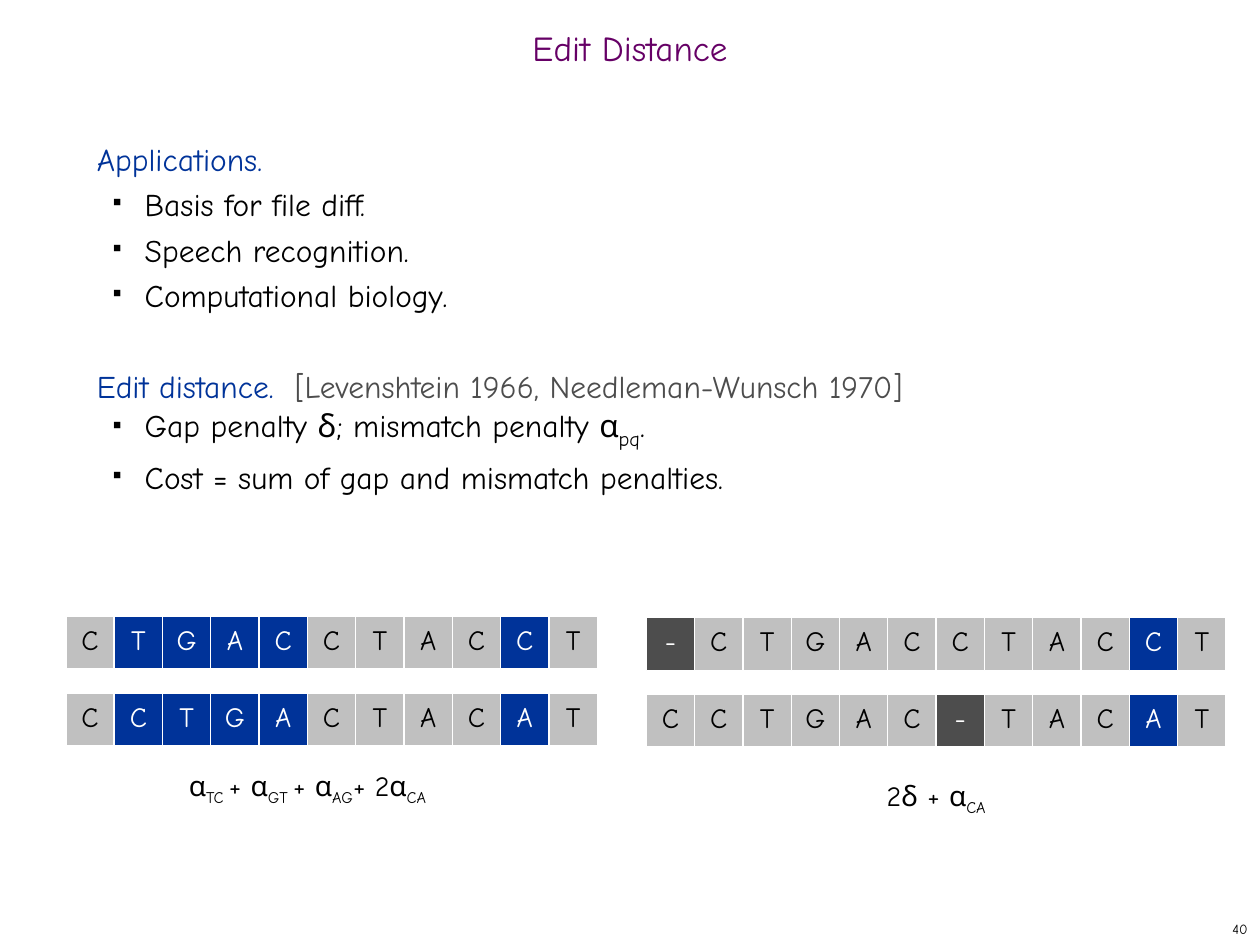
from lxml import etree
from pptx import Presentation
from pptx.dml.color import RGBColor
from pptx.enum import shapes, text
from pptx.oxml import ns
from pptx.util import Inches, Pt

FONT = "Comic Neue"
BLACK = RGBColor(0x00, 0x00, 0x00)
WHITE = RGBColor(0xFF, 0xFF, 0xFF)
BLUE = RGBColor(0x00, 0x33, 0x99)
PURPLE = RGBColor(0x66, 0x00, 0x66)
DARK_GRAY = RGBColor(0x4D, 0x4D, 0x4D)
LIGHT_GRAY = RGBColor(0xC0, 0xC0, 0xC0)

COLUMNS = 12
ROW_STEP = 0.61
CELL_HEIGHT = 0.42


def add_run(paragraph, words, size, color=BLACK, subscript=False):
    """Append one formatted run to a paragraph."""
    run = paragraph.add_run()
    run.text = words
    run.font.size = Pt(size)
    run.font.name = FONT
    run.font.color.rgb = color
    if subscript:
        run.font._element.set("baseline", "-25000")


def add_text_box(slide, left, top, width, height, anchor):
    """Add a wrapping text box and return its text frame."""
    shape = slide.shapes.add_textbox(Inches(left), Inches(top), Inches(width), Inches(height))
    frame = shape.text_frame
    frame.word_wrap = True
    frame.vertical_anchor = anchor
    return frame


def add_line_of_text(slide, box, words, size, color, alignment, spacing=1.0):
    """Add a text box that holds a single middle-anchored line."""
    paragraph = add_text_box(slide, *box, text.MSO_ANCHOR.MIDDLE).paragraphs[0]
    paragraph.alignment = alignment
    paragraph.line_spacing = spacing
    add_run(paragraph, words, size, color)


def add_bullet(paragraph):
    """Give a paragraph a small black square bullet and a hanging indent."""
    paragraph.level = 1
    properties = paragraph._p.get_or_add_pPr()
    properties.set("marL", str(Inches(0.38)))
    properties.set("indent", str(Inches(-0.25)))
    color = etree.SubElement(properties, ns.qn("a:buClr"))
    etree.SubElement(color, ns.qn("a:srgbClr"), val=str(BLACK))
    etree.SubElement(properties, ns.qn("a:buSzPct"), val="35000")
    etree.SubElement(properties, ns.qn("a:buChar"), char="■")


def add_section(frame, heading, bullets, gap=0):
    """Add a heading and its bullets, each a list of runs, to a text frame."""
    for index, runs in enumerate([heading, *bullets]):
        first = frame.paragraphs[0]
        paragraph = frame.add_paragraph() if first.runs else first
        paragraph.line_spacing = Pt(26)
        paragraph.space_before = Pt(0 if index else gap)
        if index:
            add_bullet(paragraph)
        for run in runs:
            add_run(paragraph, *run)


def add_body(slide, box):
    """Add the two sections of body text."""
    frame = add_text_box(slide, *box, text.MSO_ANCHOR.TOP)
    add_section(
        frame,
        [("Applications.", 18, BLUE)],
        [
            [("Basis for file diff.", 18)],
            [("Speech recognition.", 18)],
            [("Computational biology.", 18)],
        ],
    )
    add_section(
        frame,
        [("Edit distance.  ", 18, BLUE), ("[Levenshtein 1966, Needleman-Wunsch 1970]", 18, DARK_GRAY)],
        [
            [("Gap penalty δ; mismatch penalty α", 18), ("pq", 20, BLACK, True), (".", 18)],
            [("Cost = sum of gap and mismatch penalties.", 18)],
        ],
        gap=26,
    )


def add_rectangle(slide, left, top, width, fill=None):
    """Add a white-edged rectangle and return its centred paragraph."""
    shape = slide.shapes.add_shape(
        shapes.MSO_SHAPE.RECTANGLE, Inches(left), Inches(top), Inches(width), Inches(CELL_HEIGHT)
    )
    shape.shadow.inherit = False
    shape.line.color.rgb = WHITE
    shape.line.width = Pt(0.75)
    if fill is None:
        shape.fill.background()
    else:
        shape.fill.solid()
        shape.fill.fore_color.rgb = fill
    frame = shape.text_frame
    frame.vertical_anchor = text.MSO_ANCHOR.TOP
    frame.auto_size = text.MSO_AUTO_SIZE.SHAPE_TO_FIT_TEXT
    paragraph = frame.paragraphs[0]
    paragraph.alignment = text.PP_ALIGN.CENTER
    before = etree.SubElement(paragraph._p.get_or_add_pPr(), ns.qn("a:spcBef"))
    etree.SubElement(before, ns.qn("a:spcPct"), val="50000")
    return paragraph


def add_alignment(slide, left, top, width, rows, cost, cost_offset):
    """Add two right-aligned rows of letter cells and the cost below them."""
    pitch = width / COLUMNS
    for row, (letters, marks) in enumerate(rows):
        first_column = COLUMNS - len(letters)
        for column, (letter, mark) in enumerate(zip(letters, marks), first_column):
            fill = {"-": DARK_GRAY, "x": BLUE, ".": LIGHT_GRAY}[mark]
            paragraph = add_rectangle(slide, left + column * pitch, top + row * ROW_STEP, pitch, fill)
            add_run(paragraph, letter, 16, BLACK if mark == "." else WHITE)
    paragraph = add_rectangle(slide, left, top + cost_offset, width)
    for words, subscript in cost:
        add_run(paragraph, words, 16, BLACK, subscript)


def main():
    """Build the slide and save it."""
    presentation = Presentation()
    presentation.slide_width = Inches(10)
    presentation.slide_height = Inches(7.5)
    slide = presentation.slides.add_slide(presentation.slide_layouts[6])
    add_line_of_text(slide, (0, 0.17, 10, 0.5), "Edit Distance", 20, PURPLE, text.PP_ALIGN.CENTER, 0.7)
    add_body(slide, (0.67, 1, 8.58, 5.92))
    add_alignment(
        slide, 0.14, 4.89, 4.6,
        [("CTGACCTACCT", ".xxxx....x."), ("CCTGACTACAT", ".xxxx....x.")],
        [("α", False), ("TC ", True), ("+ α", False), ("GT ", True),
         ("+ α", False), ("AG", True), ("+ 2α", False), ("CA", True)],
        1.16,
    )
    add_alignment(
        slide, 5.13, 4.9, 4.6,
        [("-CTGACCTACCT", "-.........x."), ("CCTGAC-TACAT", "......-...x.")],
        [("2δ + α", False), ("CA", True)],
        1.23,
    )
    add_line_of_text(slide, (7.92, 7.25, 2.08, 0.25), "40", 8, BLACK, text.PP_ALIGN.RIGHT)
    presentation.save("out.pptx")


if __name__ == "__main__":
    main()
